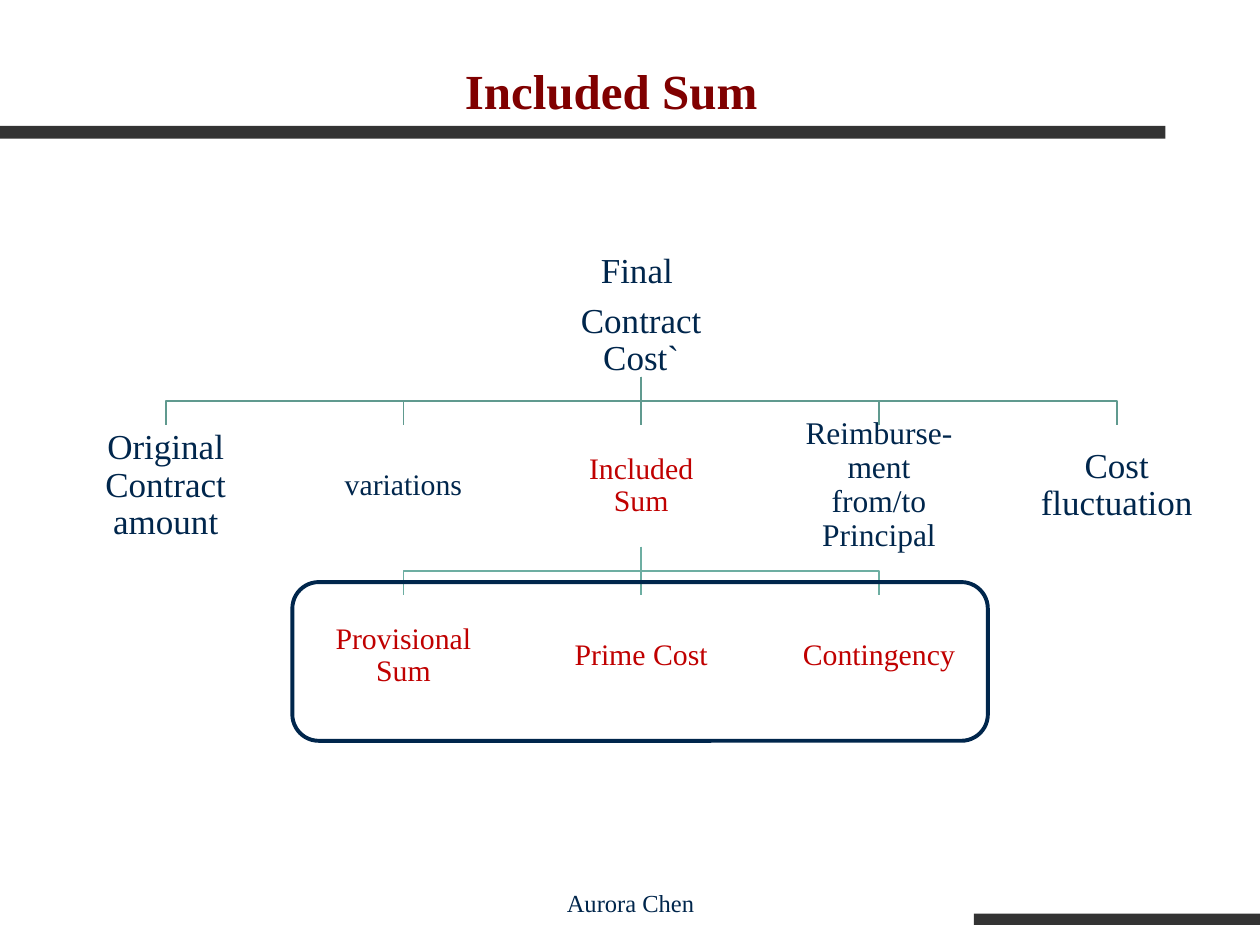
from lxml.etree import SubElement
from pptx import Presentation
from pptx.dml.color import RGBColor
from pptx.enum.shapes import MSO_CONNECTOR, MSO_SHAPE
from pptx.enum.text import MSO_ANCHOR, MSO_AUTO_SIZE, PP_ALIGN
from pptx.oxml.ns import qn
from pptx.util import Inches, Pt

COLORS = {
    "bar": "333333",
    "title": "800000",
    "navy": "00264C",
    "red": "C00000",
    "upper_link": "609A8F",
    "lower_link": "6DAEA2",
    "white": "FFFFFF",
}
FONT = "Times New Roman"
NODE_WIDTH, NODE_HEIGHT = 1.45, 0.97
FIRST_LEFT, COLUMN_STEP = 0.59, 1.887
ROW_TOPS = (2.02, 3.37, 4.72)


def rgb(name):
    return RGBColor.from_string(COLORS[name])


def write_text(frame, *lines, size, color="navy", bold=False, anchor=MSO_ANCHOR.MIDDLE,
               inset=None, line_spacing=None, space_after=0):
    frame.word_wrap = True
    frame.auto_size = MSO_AUTO_SIZE.NONE
    frame.vertical_anchor = anchor
    if inset is not None:
        frame.margin_left = frame.margin_right = Inches(inset)
        frame.margin_top = frame.margin_bottom = Inches(inset)
    for index, line in enumerate(lines):
        paragraph = frame.add_paragraph() if index else frame.paragraphs[0]
        paragraph.alignment = PP_ALIGN.CENTER
        paragraph.line_spacing = line_spacing
        paragraph.space_after = Pt(space_after)
        run = paragraph.add_run()
        run.text = line
        run.font.name = FONT
        run.font.size = Pt(size)
        run.font.bold = bold
        run.font.color.rgb = rgb(color)


def add_panel(slide, kind, left, top, width, height, fill=None, outline=None, corner=None):
    panel = slide.shapes.add_shape(kind, Inches(left), Inches(top), Inches(width), Inches(height))
    panel.shadow.inherit = False
    if corner is not None:
        panel.adjustments[0] = corner
    if fill:
        panel.fill.solid()
        panel.fill.fore_color.rgb = rgb(fill)
    else:
        panel.fill.background()
    if outline:
        panel.line.color.rgb = rgb(outline)
        panel.line.width = Pt(2.25)
    else:
        panel.line.fill.background()
    return panel


def add_node(slide, column, row, *lines, size=17, color="navy"):
    node = add_panel(slide, MSO_SHAPE.ROUNDED_RECTANGLE, FIRST_LEFT + column * COLUMN_STEP,
                     ROW_TOPS[row], NODE_WIDTH, NODE_HEIGHT, fill="white", corner=0.1)
    write_text(node.text_frame, *lines, size=size, color=color, inset=0.08 if size == 20 else 0.07,
               line_spacing=0.9, space_after=size * 0.35)
    return node


def link_nodes(slide, parent, child, color):
    start_x, start_y = parent.left + parent.width // 2, parent.top + parent.height
    end_x, end_y = child.left + child.width // 2, child.top
    if start_x == end_x:
        link = slide.shapes.add_connector(MSO_CONNECTOR.STRAIGHT, start_x, start_y, end_x, end_y)
        link.begin_connect(parent, 2)
        link.end_connect(child, 0)
        SubElement(link._element.spPr, qn("a:effectLst"))
    else:
        middle_y = (start_y + end_y) // 2
        branch = slide.shapes.build_freeform(start_x, start_y)
        branch.add_line_segments([(start_x, middle_y), (end_x, middle_y), (end_x, end_y)], close=False)
        link = branch.convert_to_shape()
        link.shadow.inherit = False
        link.fill.background()
    link.line.color.rgb = rgb(color)
    link.line.width = Pt(1)


def add_cost_tree(slide):
    final_cost = add_node(slide, 2, 0, "Final ", "Contract Cost`", size=20)
    components = [
        add_node(slide, column, 1, label, size=size, color=color)
        for column, (label, size, color) in enumerate([
            ("Original Contract amount", 20, "navy"),
            ("variations", 17, "navy"),
            ("Included Sum", 17, "red"),
            ("Reimburse-ment from/to Principal", 18, "navy"),
            ("Cost fluctuation", 20, "navy"),
        ])
    ]
    included_items = [
        add_node(slide, column, 2, label, color="red")
        for column, label in enumerate(["Provisional Sum", "Prime Cost", "Contingency"], start=1)
    ]
    for component in components:
        link_nodes(slide, final_cost, component, "upper_link")
    for item in included_items:
        link_nodes(slide, components[2], item, "lower_link")


def add_title(slide):
    title = slide.shapes.title
    title.left, title.top, title.width, title.height = map(Inches, (0, 0.31, 9.7, 0.69))
    write_text(title.text_frame, "Included Sum", size=28, color="title", bold=True,
               anchor=MSO_ANCHOR.BOTTOM)


def add_author(slide):
    author = slide.shapes.add_textbox(Inches(3.42), Inches(6.83), Inches(3.17), Inches(0.5))
    write_text(author.text_frame, "Aurora Chen", size=14, anchor=MSO_ANCHOR.BOTTOM)


def main():
    deck = Presentation()
    deck.slide_width, deck.slide_height = Inches(10), Inches(7.5)
    slide = deck.slides.add_slide(deck.slide_layouts[5])
    add_panel(slide, MSO_SHAPE.RECTANGLE, 0, 1, 9.25, 0.1, fill="bar")
    add_panel(slide, MSO_SHAPE.RECTANGLE, 7.73, 7.25, 2.27, 0.09, fill="bar")
    add_cost_tree(slide)
    add_title(slide)
    add_panel(slide, MSO_SHAPE.ROUNDED_RECTANGLE, 2.32, 4.62, 5.52, 1.26, outline="navy")
    add_author(slide)
    deck.save("out.pptx")


if __name__ == "__main__":
    main()
